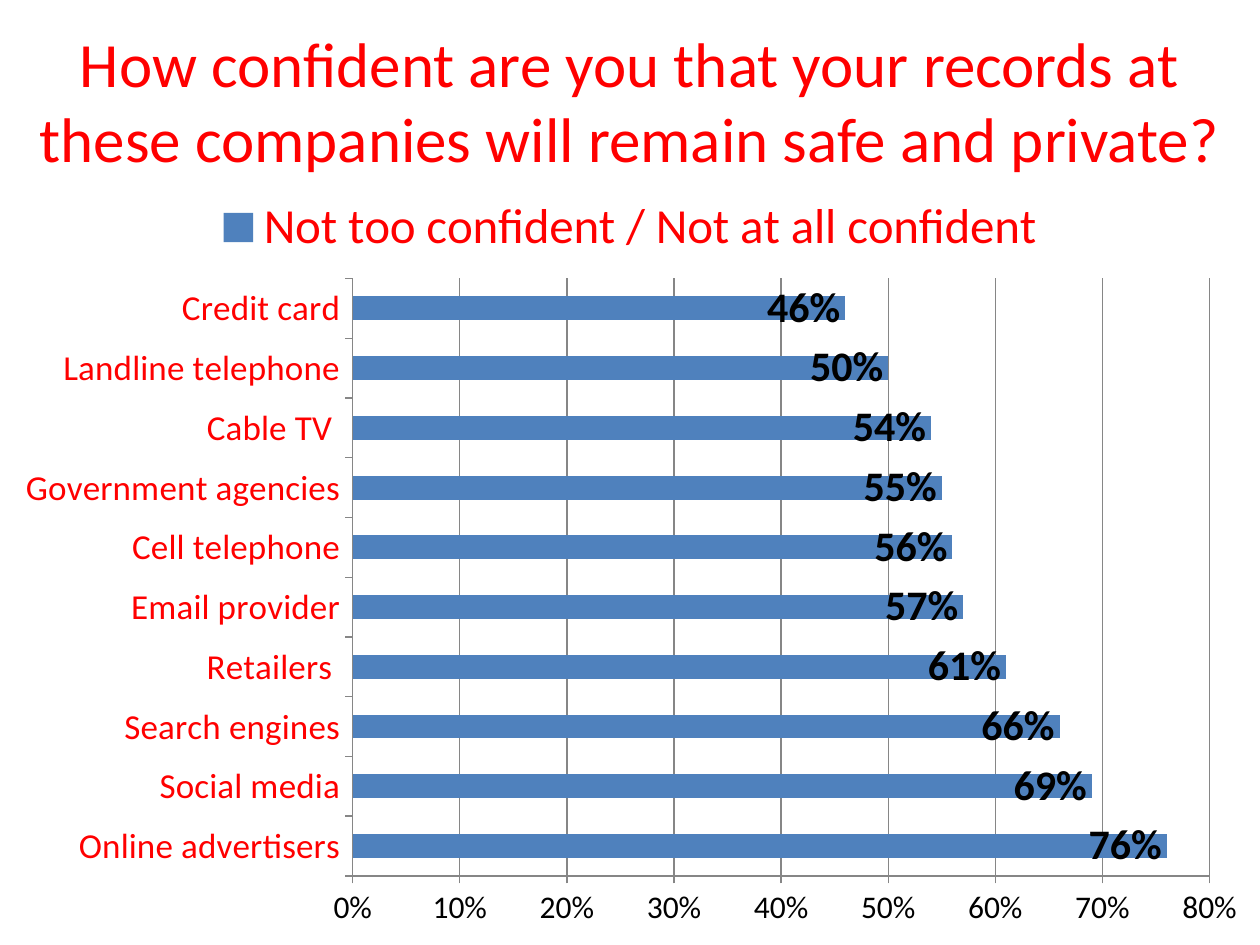
from lxml import etree
from pptx import Presentation
from pptx.chart import data as chart_data
from pptx.dml import color
from pptx.enum import chart as kinds, text
from pptx.oxml import ns
from pptx import util as u

COLORS = {"red": "FF0000", "black": "000000", "bar": "4F81BD", "line": "868686"}
FONT = "Calibri"
SERIES = "Not too confident / Not at all confident"
SHARES = {
    "Online advertisers": 0.76,
    "Social media": 0.69,
    "Search engines": 0.66,
    "Retailers ": 0.61,
    "Email provider": 0.57,
    "Cell telephone": 0.56,
    "Government agencies": 0.55,
    "Cable TV ": 0.54,
    "Landline telephone": 0.50,
    "Credit card": 0.46,
}


def px(*lengths):
    """Turn whole pixels into EMU at 126 pixels to the inch."""
    return [round(length * u.Inches(1) / 126) for length in lengths]


def rgb(name):
    """Look up a named colour."""
    return color.RGBColor.from_string(COLORS[name])


def set_font(font, size, name, bold=False):
    """Set face, size, colour and weight."""
    font.name, font.size, font.bold = FONT, u.Pt(size), bold
    font.color.rgb = rgb(name)


def add_title(page, words):
    """Fill and place the title placeholder."""
    title = page.shapes.title
    title.left, title.top, title.width, title.height = px(10, 21, 1239, 158)
    frame = title.text_frame
    frame.text = words
    frame.word_wrap = True
    frame.vertical_anchor = text.MSO_ANCHOR.MIDDLE
    para = frame.paragraphs[0]
    para.alignment = text.PP_ALIGN.CENTER
    set_font(para.runs[0].font, 36, "red")


def style_axis(axis, size, name):
    """Format an axis line, its ticks and its labels."""
    axis.major_tick_mark = kinds.XL_TICK_MARK.OUTSIDE
    axis.minor_tick_mark = kinds.XL_TICK_MARK.NONE
    axis.format.line.color.rgb = rgb("line")
    axis.format.line.width = u.Pt(0.75)
    set_font(axis.tick_labels.font, size, name)


def set_plot_box(chart, **fractions):
    """Fix the inner plot area as fractions of the chart."""
    area = chart._chartSpace.chart.plotArea
    for old in area.findall(ns.qn("c:layout")):
        area.remove(old)
    layout = etree.Element(ns.qn("c:layout"))
    manual = etree.SubElement(layout, ns.qn("c:manualLayout"))
    settings = {"layoutTarget": "inner", "xMode": "edge", "yMode": "edge", **fractions}
    for tag, value in settings.items():
        etree.SubElement(manual, ns.qn(f"c:{tag}")).set("val", str(value))
    area.insert(0, layout)


def add_bars(page):
    """Add the bar chart with its axes, legend and labels."""
    table = chart_data.CategoryChartData(number_format="0%")
    table.categories = list(SHARES)
    table.add_series(SERIES, list(SHARES.values()))
    chart = page.shapes.add_chart(
        kinds.XL_CHART_TYPE.BAR_STACKED, *px(0, 179, 1260, 766), table).chart
    chart.has_title = False
    set_font(chart.font, 10, "black")
    set_plot_box(chart, x=0.28, y=0.13, w=0.68, h=0.78)

    chart.has_legend = True
    chart.legend.position = kinds.XL_LEGEND_POSITION.TOP
    chart.legend.include_in_layout = False
    set_font(chart.legend.font, 28, "red")

    style_axis(chart.category_axis, 20, "red")
    axis = chart.value_axis
    style_axis(axis, 18, "black")
    axis.minimum_scale, axis.maximum_scale, axis.major_unit = 0, 0.8, 0.1
    axis.tick_labels.number_format = "0%"
    axis.tick_labels.number_format_is_linked = False
    axis.has_major_gridlines = True
    axis.major_gridlines.format.line.color.rgb = rgb("line")
    axis.major_gridlines.format.line.width = u.Pt(0.75)

    plot = chart.plots[0]
    plot.gap_width, plot.overlap, plot.vary_by_categories = 150, 100, False
    series = plot.series[0]
    series.format.fill.solid()
    series.format.fill.fore_color.rgb = rgb("bar")
    labels = series.data_labels
    labels.show_value = True
    labels.position = kinds.XL_LABEL_POSITION.INSIDE_END
    labels.number_format = "0%"
    labels.number_format_is_linked = False
    set_font(labels.font, 24, "black", bold=True)


def main():
    """Build and save the deck."""
    deck = Presentation()
    deck.slide_width, deck.slide_height = px(1260, 945)
    page = deck.slides.add_slide(deck.slide_layouts[5])
    add_title(page, "How confident are you that your records at these companies "
                    "will remain safe and private?")
    add_bars(page)
    deck.save("out.pptx")


if __name__ == "__main__":
    main()
